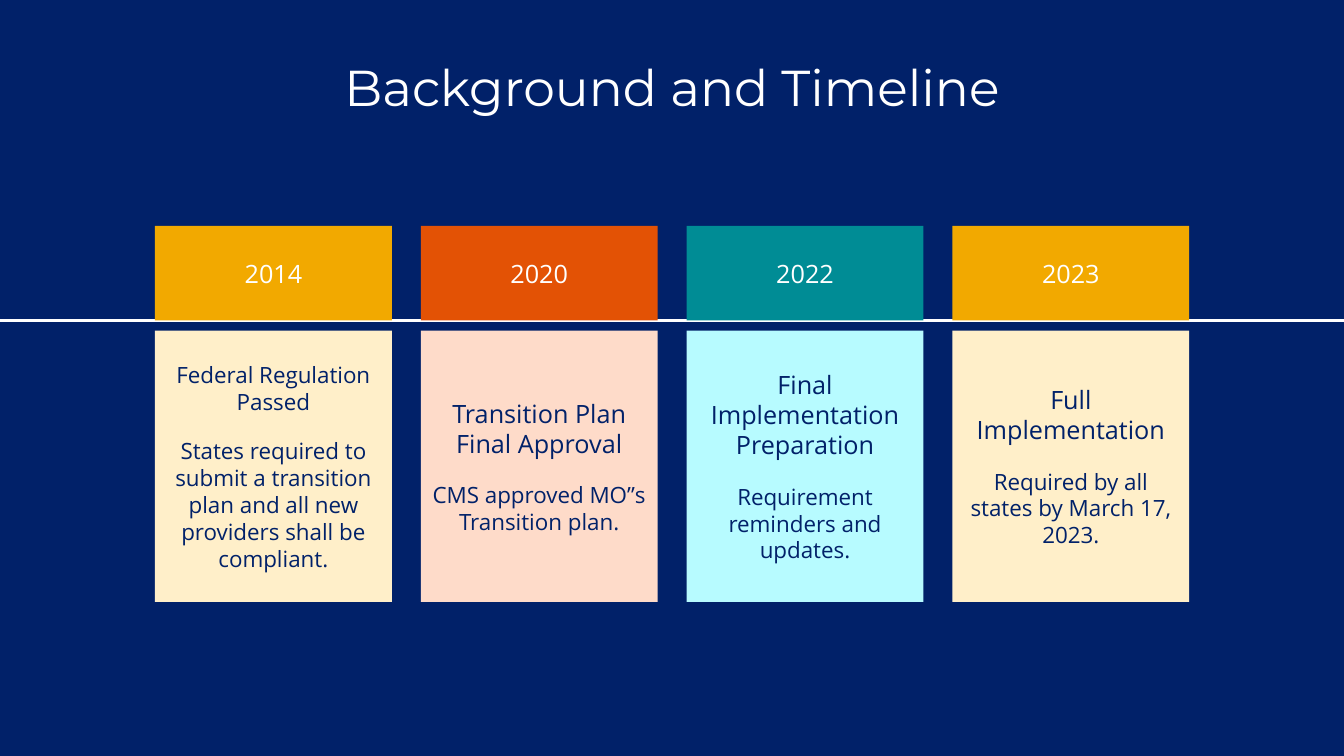
import pptx
import pptx.dml.color
import pptx.enum.shapes
import pptx.enum.text
import pptx.oxml
import pptx.oxml.ns
import pptx.util

Pt = pptx.util.Pt
SLIDE_W, SLIDE_H = 960, 540
HEADING_FONT, BODY_FONT = "Montserrat", "Open Sans"

COLOURS = {
    "navy": "012169", "white": "FFFFFF",
    "gold": "F2A900", "pale gold": "FFEFC9",
    "orange": "E35205", "pale orange": "FEDBC9",
    "teal": "008C95", "pale teal": "B7FBFF",
}

# Year, accent colour, milestone, milestone size, detail
MILESTONES = [
    ("2014", "gold", "Federal Regulation Passed", 16,
     "States required to submit a transition plan and all new providers shall be compliant."),
    ("2020", "orange", "Transition Plan Final Approval", 18,
     "CMS approved MO”s Transition plan."),
    ("2022", "teal", "Final Implementation Preparation", 18,
     "Requirement reminders and updates."),
    ("2023", "gold", "Full Implementation", 18,
     "Required by all states by March 17, 2023."),
]


def colour(name):
    return pptx.dml.color.RGBColor.from_string(COLOURS[name])


def write(paragraph, text, size, font, ink):
    paragraph.alignment = pptx.enum.text.PP_ALIGN.CENTER
    run = paragraph.add_run()
    run.text = text
    run.font.size = Pt(size)
    run.font.name = font
    run.font.color.rgb = colour(ink)


def add_title(slide, left, top, width, height):
    title = slide.shapes.title
    title.left, title.top, title.width, title.height = map(Pt, (left, top, width, height))
    title.text_frame.vertical_anchor = pptx.enum.text.MSO_ANCHOR.MIDDLE
    heading = title.text_frame.paragraphs[0]
    heading.line_spacing = 0.9
    write(heading, "Background and Timeline", 36, HEADING_FONT, "white")


def add_axis(slide, left, y, width):
    axis = slide.shapes.add_connector(
        pptx.enum.shapes.MSO_CONNECTOR.STRAIGHT, Pt(left), Pt(y), Pt(left + width), Pt(y))
    axis.line.color.rgb = colour("white")
    axis.line.width = Pt(2)
    axis._element.spPr.append(
        pptx.oxml.parse_xml("<a:effectLst %s/>" % pptx.oxml.ns.nsdecls("a")))


def add_panel(slide, left, top, width, height, fill):
    panel = slide.shapes.add_shape(
        pptx.enum.shapes.MSO_SHAPE.RECTANGLE, Pt(left), Pt(top), Pt(width), Pt(height))
    panel.shadow.inherit = False
    panel.fill.solid()
    panel.fill.fore_color.rgb = colour(fill)
    panel.line.fill.background()
    panel.text_frame.word_wrap = True
    panel.text_frame.vertical_anchor = pptx.enum.text.MSO_ANCHOR.MIDDLE
    return panel.text_frame


def add_milestone(slide, left, top, width, height, milestone):
    year, accent, name, name_size, detail = milestone
    year_h, gap = 67.7, 7.2

    # Year above the axis
    year_text = add_panel(slide, left, top, width, year_h, accent)
    write(year_text.paragraphs[0], year, 18, BODY_FONT, "white")

    # Description below the axis
    story = add_panel(slide, left, top + year_h + gap, width, height - year_h - gap,
                      "pale " + accent)
    write(story.paragraphs[0], name, name_size, BODY_FONT, "navy")
    detail_text = story.add_paragraph()
    detail_text.space_before = Pt(16.3)
    write(detail_text, detail, 16, BODY_FONT, "navy")


def add_timeline(slide, left, top, width, height):
    card_w = 169.2
    pitch = (width - card_w) / (len(MILESTONES) - 1)
    add_axis(slide, 0, top + 67.7, SLIDE_W)
    for index, milestone in enumerate(MILESTONES):
        add_milestone(slide, left + index * pitch, top, card_w, height, milestone)


def main():
    deck = pptx.Presentation()
    deck.slide_width, deck.slide_height = Pt(SLIDE_W), Pt(SLIDE_H)
    slide = deck.slides.add_slide(deck.slide_layouts[5])
    slide.background.fill.solid()
    slide.background.fill.fore_color.rgb = colour("navy")
    add_title(slide, 66, 29.5, 828, 70)
    add_timeline(slide, 110.7, 161.3, 738.8, 268.7)
    deck.save("out.pptx")


if __name__ == "__main__":
    main()
